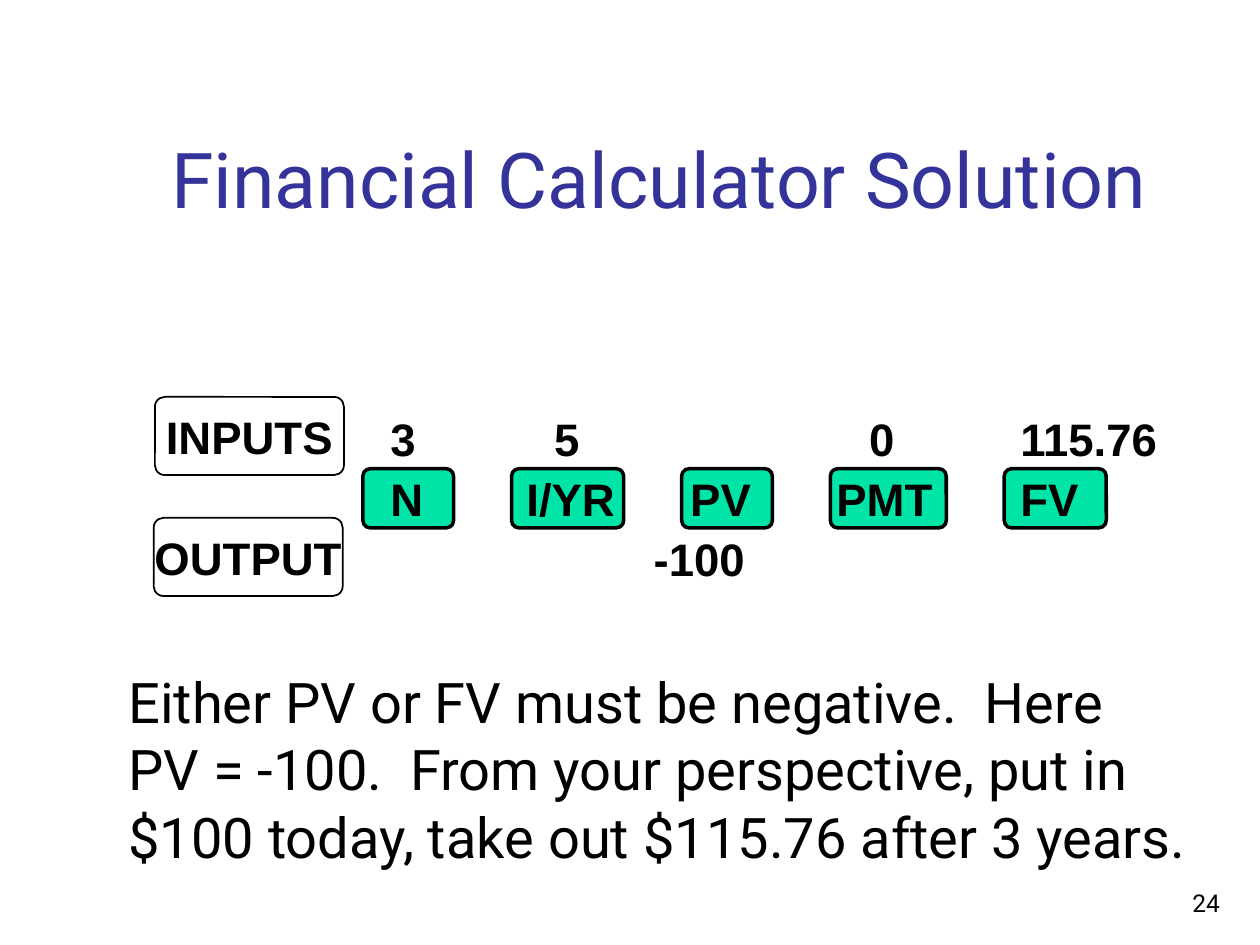
import pptx
import pptx.util
from pptx.dml.color import RGBColor
from pptx.enum.shapes import MSO_SHAPE
from pptx.enum.text import MSO_ANCHOR, MSO_AUTO_SIZE, PP_ALIGN
from pptx.oxml.ns import qn
from lxml import etree

Inches = pptx.util.Inches
BLACK = RGBColor(0x00, 0x00, 0x00)
INDIGO = RGBColor(0x33, 0x33, 0x99)
GREEN = RGBColor(0x00, 0xE4, 0xA8)


def write_text(tf, text, size=26, font="Arial", color=BLACK, bold=False,
               align=PP_ALIGN.LEFT, anchor=MSO_ANCHOR.TOP, wrap=True,
               spacing=None, tabs=()):
    """Fill a frame: one paragraph per line, one tuple of tab stops per line."""
    tf.word_wrap = wrap
    tf.vertical_anchor = anchor
    for i, line in enumerate(text.split("\n")):
        p = tf.paragraphs[0] if i == 0 else tf.add_paragraph()
        if tabs:
            tab_list = etree.SubElement(p._p.get_or_add_pPr(), qn("a:tabLst"))
            for stop in tabs[i]:
                etree.SubElement(tab_list, qn("a:tab"),
                                 pos=str(Inches(stop)), algn="l")
        p.alignment = align
        if spacing:
            p.line_spacing = spacing
        r = p.add_run()
        r.text = line
        r.font.name = font
        r.font.size = pptx.util.Pt(size)
        r.font.bold = bold
        r.font.color.rgb = color


class SlideBuilder:
    body_font = "Roboto"

    def __init__(self, prs):
        self.s = prs.slides.add_slide(prs.slide_layouts[6])

    def text(self, text, x, y, w, h, grow=False, **fmt):
        sp = self.s.shapes.add_textbox(Inches(x), Inches(y), Inches(w), Inches(h))
        write_text(sp.text_frame, text, **fmt)
        if grow:
            sp.text_frame.auto_size = MSO_AUTO_SIZE.SHAPE_TO_FIT_TEXT

    def box(self, x, y, w, h, fill=None, line=1, text=None):
        sp = self.s.shapes.add_shape(MSO_SHAPE.ROUNDED_RECTANGLE, Inches(x),
                                     Inches(y), Inches(w), Inches(h))
        sp.adjustments[0] = 0.125
        sp.shadow.inherit = False
        if fill is None:
            sp.fill.background()
        else:
            sp.fill.solid()
            sp.fill.fore_color.rgb = fill
        sp.line.color.rgb = BLACK
        sp.line.width = pptx.util.Pt(line)
        if text:
            write_text(sp.text_frame, text, bold=True, align=PP_ALIGN.CENTER,
                       anchor=MSO_ANCHOR.MIDDLE, wrap=False)


def main():
    prs = pptx.Presentation()
    prs.slide_width, prs.slide_height = Inches(10), Inches(7.5)
    b = SlideBuilder(prs)

    # Title
    b.text("Financial Calculator Solution", 1.26, 0.23, 8.52, 1.6, size=44,
           font=b.body_font, color=INDIGO, anchor=MSO_ANCHOR.BOTTOM)

    # Calculator keys
    for x, w in ((2.88, 0.72), (4.06, 0.89), (5.41, 0.72),
                 (6.59, 0.92), (7.97, 0.81)):
        b.box(x, 3.72, w, 0.47, fill=GREEN, line=2)

    # Values above, on and below the keys
    b.text("\t3\t5\t0\t115.76\n\tN\tI/YR\tPV\tPMT\tFV\n\t-100",
           1, 3.17, 8.56, 1.53, grow=True, bold=True, spacing=1.1,
           tabs=((2, 3.3, 5.8, 7), (2, 3.08, 4.38, 5.54, 7), (4.09,)))

    # Row labels
    b.box(1.23, 3.15, 1.5, 0.62, text="INPUTS")
    b.box(1.22, 4.11, 1.5, 0.62, text="OUTPUT")

    # Explanation
    b.text("Either PV or FV must be negative.  Here\n"
           "PV = -100.  From your perspective, put in\n"
           "$100 today, take out $115.76 after 3 years.",
           0.92, 5.25, 8.8, 1.71, grow=True, size=32, font=b.body_font,
           wrap=False)

    # Slide number
    b.text("24", 7.7, 6.83, 2.08, 0.5, size=14, font=b.body_font,
           align=PP_ALIGN.RIGHT, anchor=MSO_ANCHOR.BOTTOM)

    prs.save("out.pptx")


if __name__ == "__main__":
    main()
